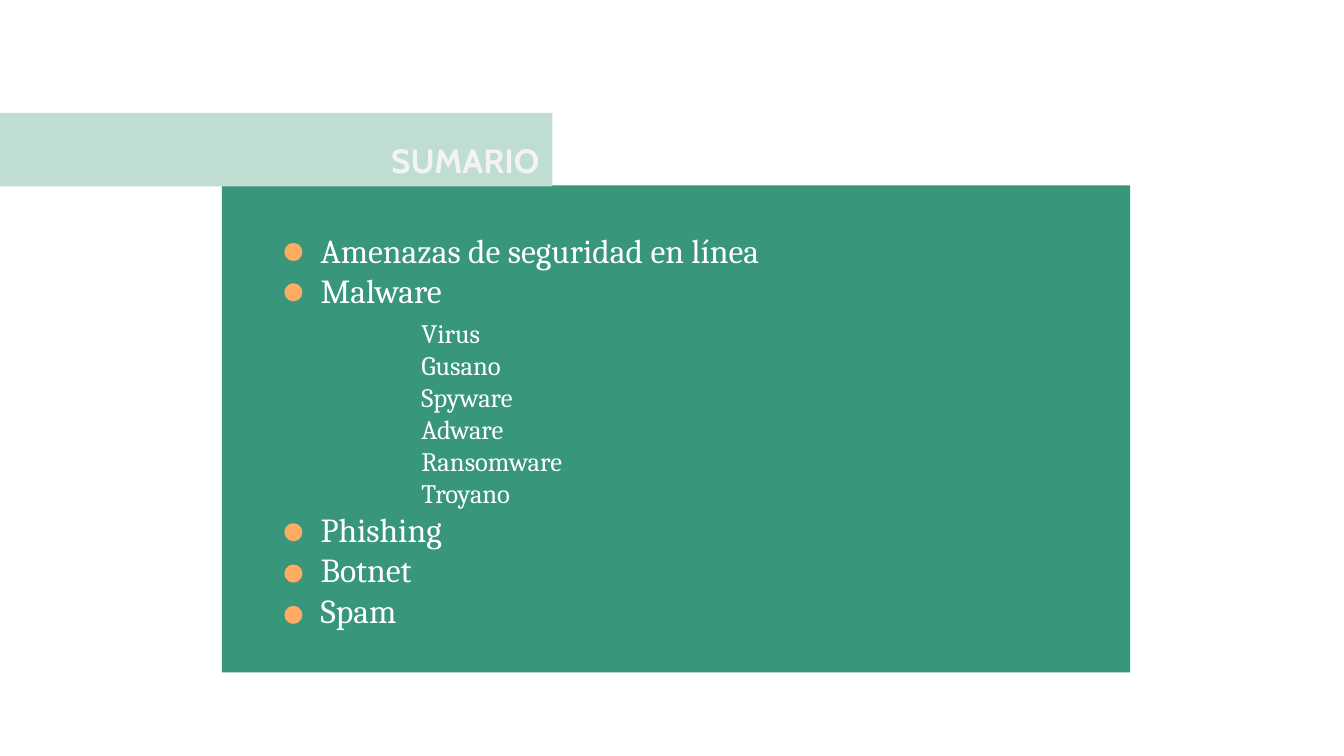
from pptx import Presentation
from pptx.dml.color import RGBColor
from pptx.enum import shapes, text
from pptx.util import Inches, Pt

HUES = {"panel": "38967B", "band": "BFDDD1", "dot": "FFAB61",
        "title": "F3F3F3", "text": "FFFFFF"}
TOPICS = [
    ("Amenazas de seguridad en línea", []),
    ("Malware", ["Virus", "Gusano", "Spyware", "Adware", "Ransomware", "Troyano"]),
    ("Phishing", []),
    ("Botnet", []),
    ("Spam", []),
]
DOTS = [0.57, 0.97, 3.35, 3.76, 4.17]  # below the panel's top edge


def hue(name):
    return RGBColor.from_string(HUES[name])


def add_form(slide, kind, box, fill):
    form = slide.shapes.add_shape(kind, *map(Inches, box))
    form.shadow.inherit = False
    form.fill.solid()
    form.fill.fore_color.rgb = hue(fill)
    form.line.fill.background()
    return form


def style(para, face, size, color, bold=False):
    font = para.runs[0].font
    font.name, font.size, font.bold = face, Pt(size), bold
    font.color.rgb = hue(color)


def add_title(slide, box):
    band = add_form(slide, shapes.MSO_SHAPE.RECTANGLE, box, "band")
    frame = band.text_frame
    frame.text = "SUMARIO"
    frame.vertical_anchor = text.MSO_ANCHOR.BOTTOM
    frame.margin_right, frame.margin_bottom = Inches(0.13), Inches(0.06)
    para = frame.paragraphs[0]
    para.alignment = text.PP_ALIGN.RIGHT
    style(para, "Cabin", 24, "title", True)


def add_line(frame, words, first, sub, gap=0):
    para = frame.paragraphs[0] if first else frame.add_paragraph()
    para.text = words
    para.space_before = Pt(gap)
    props = para._p.get_or_add_pPr()
    props.set("marL", str(Inches(2 if sub else 1)))
    props.set("indent", "0")
    style(para, "Cambria", 19 if sub else 24, "text")


def add_list(slide, box):
    left, top, wide, high = box
    add_form(slide, shapes.MSO_SHAPE.RECTANGLE, box, "panel")
    area = left - 0.15, top + 0.31, wide - 0.56, high - 0.3
    frame = slide.shapes.add_textbox(*map(Inches, area)).text_frame
    frame.word_wrap = True
    frame.margin_left = frame.margin_right = Inches(0.13)
    frame.margin_top = frame.margin_bottom = Inches(0.13)
    for row, (topic, parts) in enumerate(TOPICS):
        add_line(frame, topic, row == 0, False)
        for spot, part in enumerate(parts):
            add_line(frame, part, False, True, 0 if spot else 5)
    for drop in DOTS:
        add_form(slide, shapes.MSO_SHAPE.OVAL,
                 (left + 0.62, top + drop, 0.18, 0.18), "dot")


def main():
    deck = Presentation()
    deck.slide_width, deck.slide_height = Inches(13.33), Inches(7.5)
    slide = deck.slides.add_slide(deck.slide_layouts[6])
    add_list(slide, (2.2, 1.84, 9.01, 4.83))
    add_title(slide, (0, 1.12, 5.48, 0.73))
    deck.save("out.pptx")


if __name__ == "__main__":
    main()
